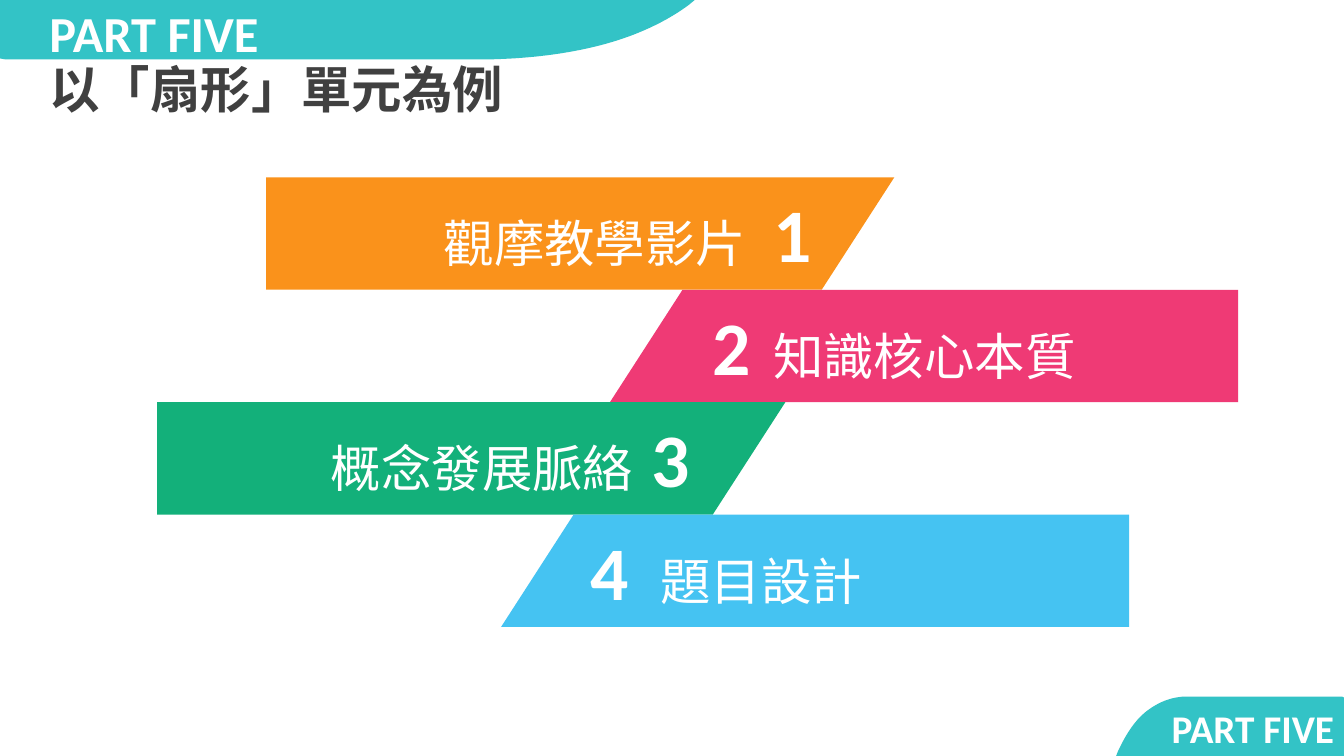
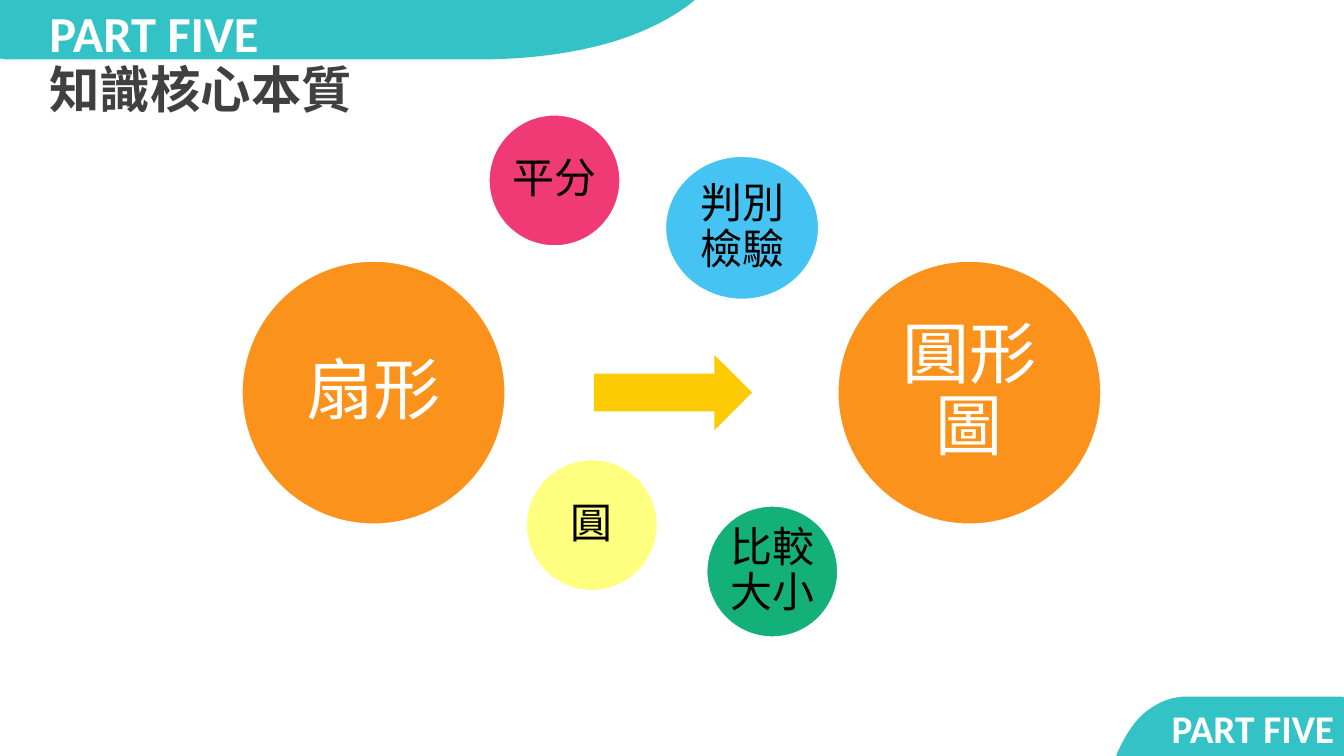
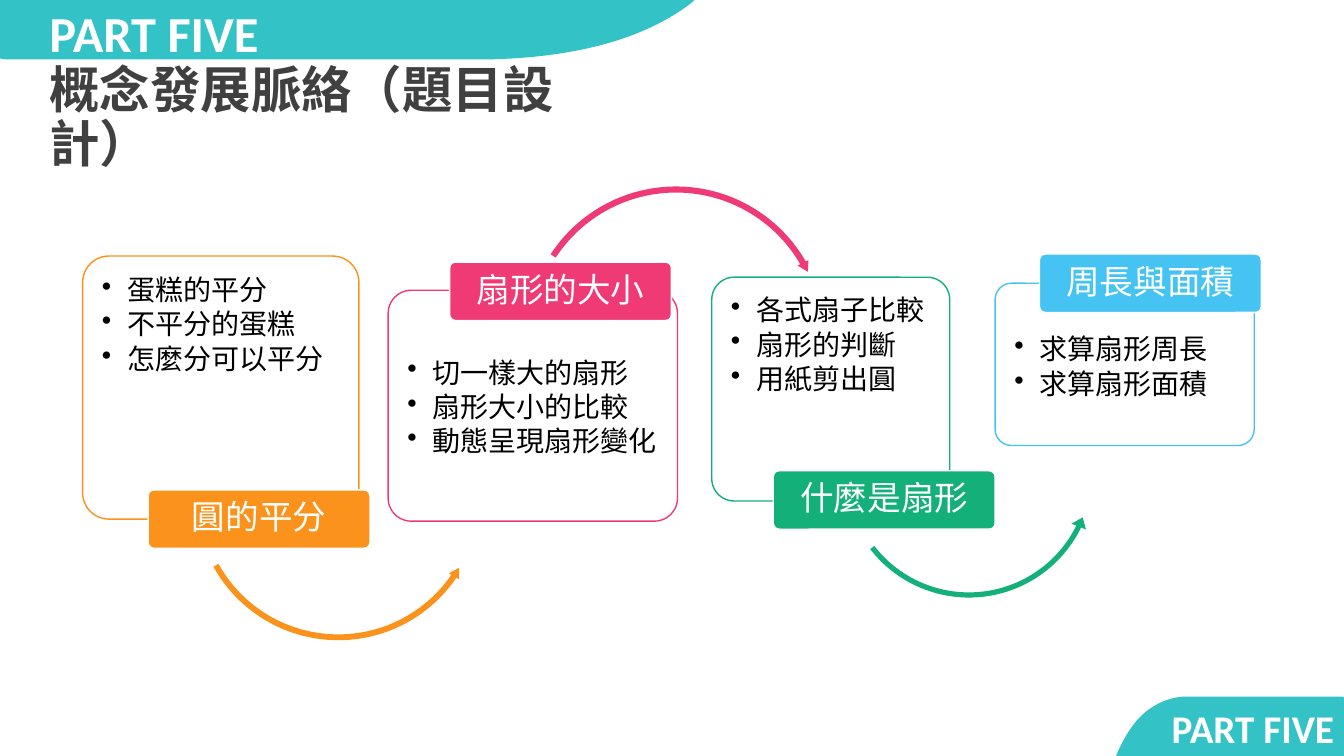
from pptx import Presentation
from pptx.dml.color import RGBColor
from pptx.enum.shapes import MSO_SHAPE as Preset
from pptx.enum.text import MSO_ANCHOR as Anchor, MSO_AUTO_SIZE as AutoSize, PP_ALIGN as Align
from pptx.oxml.ns import qn
from pptx.util import Inches, Pt
from lxml import etree

TEAL = RGBColor(0x00, 0xB4, 0xB8)
ORANGE = RGBColor(0xFA, 0x92, 0x1B)
PINK = RGBColor(0xEF, 0x3A, 0x75)
GREEN = RGBColor(0x13, 0xB0, 0x7A)
BLUE = RGBColor(0x45, 0xC3, 0xF2)
AMBER = RGBColor(0xFC, 0xCB, 0x03)
YELLOW = RGBColor(0xFF, 0xFF, 0x00)
WHITE = RGBColor(0xFF, 0xFF, 0xFF)
BLACK = RGBColor(0x00, 0x00, 0x00)
CHARCOAL = RGBColor(0x40, 0x40, 0x40)

FONT = "Calibri"
SECTION = "PART FIVE"
WIDTH, HEIGHT = 13.33, 7.5


def curve(start, control1, control2, end, steps=24):
    """Points along a cubic Bezier curve, without its start."""
    points = []
    for step in range(1, steps + 1):
        t = step / steps
        weights = ((1 - t) ** 3, 3 * t * (1 - t) ** 2, 3 * t ** 2 * (1 - t), t ** 3)
        corners = (start, control1, control2, end)
        points.append(tuple(sum(w * c[axis] for w, c in zip(weights, corners))
                            for axis in (0, 1)))
    return points


TOP_BAND = [(0, 0), (6.89, 0), (6.83, 0.05),
            *curve((6.83, 0.05), (6.6, 0.22), (6.3, 0.36), (5.95, 0.45)),
            *curve((5.95, 0.45), (5.6, 0.54), (5.19, 0.59), (4.73, 0.59)),
            (0.06, 0.59), (0, 0.58)]
CORNER_BAND = [(WIDTH, HEIGHT), (11.07, HEIGHT), (11.09, 7.45),
               *curve((11.09, 7.45), (11.17, 7.28), (11.26, 7.14), (11.38, 7.05)),
               *curve((11.38, 7.05), (11.5, 6.96), (11.63, 6.91), (11.78, 6.91)),
               (13.31, 6.91), (WIDTH, 6.92)]


class Deck:
    """The shared style, and the slide being built."""

    def __init__(self):
        self.presentation = Presentation()
        self.presentation.slide_width = Inches(WIDTH)
        self.presentation.slide_height = Inches(HEIGHT)
        self.layout = self.presentation.slide_layouts[1]
        self.slide = None

    def new_slide(self, title, title_width=4.83):
        first = self.slide is None
        self.slide = self.presentation.slides.add_slide(self.layout)
        if first:
            self.add_bands_to_layout()
        heading, section = self.slide.placeholders
        self.place(heading, 0.39, 0.59, title_width, 0.63)
        self.set_text(heading, [title], 36, CHARCOAL, bold=True)
        self.place(section, 0.39, 0.04, 2.63, 0.51)
        self.set_text(section, [SECTION], 36, WHITE, bold=True, bullet="")
        self.text(10.98, 6.99, 2.35, 0.51, [SECTION], 28, WHITE, bold=True, align=Align.RIGHT)

    def add_bands_to_layout(self):
        for number, outline in enumerate((TOP_BAND, CORNER_BAND), 1):
            band = self.polygon(outline, TEAL, opacity=80)
            band.element.nvSpPr.cNvPr.set("id", str(100 + number))
            self.layout.shapes.element.append(band.element)

    @staticmethod
    def place(shape, left, top, width, height):
        shape.left, shape.top = Inches(left), Inches(top)
        shape.width, shape.height = Inches(width), Inches(height)

    @staticmethod
    def paint(shape, fill, line=None, opacity=100):
        shape.shadow.inherit = False
        shape.fill.solid()
        shape.fill.fore_color.rgb = fill
        if opacity < 100:
            color = shape.element.spPr.find(qn("a:solidFill"))[0]
            etree.SubElement(color, qn("a:alpha")).set("val", str(opacity * 1000))
        if line is None:
            shape.line.fill.background()
        else:
            shape.line.color.rgb = line
            shape.line.width = Pt(1)

    @staticmethod
    def set_text(shape, lines, size, color, bold=False, align=Align.LEFT, anchor=Anchor.TOP,
                 spacing=0.9, after=0, bullet=None, margins=(0.1, 0.05), wrap=True):
        """Fill a shape with paragraphs; an empty bullet removes the inherited one."""
        frame = shape.text_frame
        frame.auto_size = AutoSize.NONE
        frame.word_wrap = wrap
        frame.vertical_anchor = anchor
        frame.margin_left = frame.margin_right = Inches(margins[0])
        frame.margin_top = frame.margin_bottom = Inches(margins[1])
        frame.text = "\n".join(lines)
        for paragraph in frame.paragraphs:
            paragraph.alignment = align
            paragraph.line_spacing = spacing
            paragraph.space_before = Pt(0)
            paragraph.space_after = Pt(after)
            if bullet is not None:
                properties = paragraph._p.get_or_add_pPr()
                indent = Inches(0.25) if bullet else 0
                properties.set("marL", str(indent))
                properties.set("indent", str(-indent))
                if bullet:
                    etree.SubElement(properties, qn("a:buChar")).set("char", bullet)
                else:
                    etree.SubElement(properties, qn("a:buNone"))
            font = paragraph.font
            font.name, font.size, font.bold = FONT, Pt(size), bold
            font.color.rgb = color

    def text(self, left, top, width, height, lines, size, color, **style):
        box = self.slide.shapes.add_textbox(
            Inches(left), Inches(top), Inches(width), Inches(height))
        self.set_text(box, lines, size, color, **style)

    def shape(self, preset, left, top, width, height, fill, line=None, opacity=100,
              adjustments=(), rotation=0):
        shape = self.slide.shapes.add_shape(
            preset, Inches(left), Inches(top), Inches(width), Inches(height))
        for index, value in enumerate(adjustments):
            shape.adjustments[index] = value
        shape.rotation = rotation
        self.paint(shape, fill, line, opacity)
        return shape

    def polygon(self, points, fill, opacity=100):
        corners = [(Inches(x), Inches(y)) for x, y in points]
        builder = self.slide.shapes.build_freeform(*corners[0])
        builder.add_line_segments(corners[1:], close=True)
        shape = builder.convert_to_shape()
        self.paint(shape, fill, opacity=opacity)
        return shape

    def circle(self, left, top, width, height, fill, label, size, color, opacity=100):
        circle = self.shape(Preset.OVAL, left, top, width, height, fill, WHITE, opacity)
        self.set_text(circle, [label], size, color, align=Align.CENTER,
                      anchor=Anchor.MIDDLE, margins=(0.04, 0.04))

    def card(self, box, color, items, list_top, tag, tag_left, tag_top, arrow=None):
        left, top, width, height = box
        self.shape(Preset.ROUNDED_RECTANGLE, *box, WHITE, color, 90, [0.1])
        self.text(left + 0.05, list_top, width - 0.1, top + height - list_top - 0.05, items,
                  20, BLACK, after=3, bullet="•", margins=(0.14, 0.14))
        if arrow:
            preset, arrow_left, arrow_top, side, rotation, adjustments = arrow
            self.shape(preset, arrow_left, arrow_top, side, side, color,
                       adjustments=adjustments, rotation=rotation)
        label = self.shape(Preset.ROUNDED_RECTANGLE, tag_left, tag_top, 2.2, 0.58,
                           color, WHITE, adjustments=[0.1])
        self.set_text(label, [tag], 24, WHITE, align=Align.CENTER, anchor=Anchor.MIDDLE,
                      margins=(0.05, 0.03))


def build_agenda(deck):
    deck.new_slide("以「扇形」單元為例")
    width, height, slant = 6.23, 1.115, 0.72
    banners = [("觀摩教學影片", ORANGE, 2.64, 2.87), ("知識核心本質", PINK, 6.05, 7.57),
               ("概念發展脈絡", GREEN, 1.56, 1.75), ("題目設計", BLUE, 4.97, 6.45)]
    for index, (label, color, left, label_left) in enumerate(banners):
        top = 1.76 + index * height
        right, bottom = left + width, top + height
        if index % 2 == 0:
            outline = [(left, top), (right, top), (right - slant, bottom), (left, bottom)]
            align = Align.RIGHT
        else:
            outline = [(left + slant, top), (right, top), (right, bottom), (left, bottom)]
            align = Align.LEFT
        deck.polygon(outline, color)
        deck.text(7.57 - index * 0.605, top + 0.05, 0.59, 1.01, [str(index + 1)], 54, WHITE,
                  bold=True, spacing=1.0, wrap=False)
        deck.text(label_left, top + 0.12, 4.63, 0.85, [label], 36, WHITE,
                  align=align, spacing=1.3)


def build_core_knowledge(deck):
    deck.new_slide("知識核心本質")
    for left, label in ((8.31, "圓形圖"), (2.4, "扇形")):
        deck.circle(left, 2.59, 2.61, 2.61, ORANGE, label, 48, WHITE)
    deck.shape(Preset.RIGHT_ARROW, 5.89, 3.52, 1.57, 0.75, AMBER)
    for left, top, width, height, color, label, opacity in (
            (4.85, 1.14, 1.3, 1.3, PINK, "平分", 100),
            (7.01, 5.02, 1.3, 1.3, GREEN, "比較大小", 100),
            (6.6, 1.55, 1.52, 1.42, BLUE, "判別檢驗", 100),
            (5.22, 4.56, 1.3, 1.3, YELLOW, "圓", 50)):
        deck.circle(left, top, width, height, color, label, 30, BLACK, opacity)


def build_concept_path(deck):
    deck.new_slide("概念發展脈絡（題目設計）", title_width=5.93)
    deck.card((0.82, 2.54, 2.74, 2.61), ORANGE,
              ["蛋糕的平分", "不平分的蛋糕", "怎麼分可以平分"], 2.6, "圓的平分", 1.47, 4.86,
              (Preset.LEFT_CIRCULAR_ARROW, 1.91, 3.49, 2.89, 11.3,
               (0.02, 2.49, 13.8, 83.8, 0.02)))
    deck.card((3.85, 2.88, 2.87, 2.29), PINK,
              ["切一樣大的扇形", "扇形大小的比較", "動態呈現扇形變化"], 3.42,
              "扇形的大小", 4.46, 2.6,
              (Preset.CIRCULAR_ARROW, 5.19, 1.82, 3.03, 357.2,
               (0.02, 2.37, 199.68, 129.56, 0.02)))
    deck.card((7.06, 2.75, 2.36, 2.22), GREEN,
              ["各式扇子比較", "扇形的判斷", "用紙剪出圓"], 2.8, "什麼是扇形", 7.67, 4.67,
              (Preset.LEFT_CIRCULAR_ARROW, 8.32, 3.4, 2.58, 10,
               (0.02, 2.81, 9.68, 79.36, 0.03)))
    deck.card((9.87, 2.81, 2.57, 1.61), BLUE,
              ["求算扇形周長", "求算扇形面積"], 3.19, "周長與面積", 10.31, 2.52)


def main():
    deck = Deck()
    build_agenda(deck)
    build_core_knowledge(deck)
    build_concept_path(deck)
    deck.presentation.save("out.pptx")


if __name__ == "__main__":
    main()
